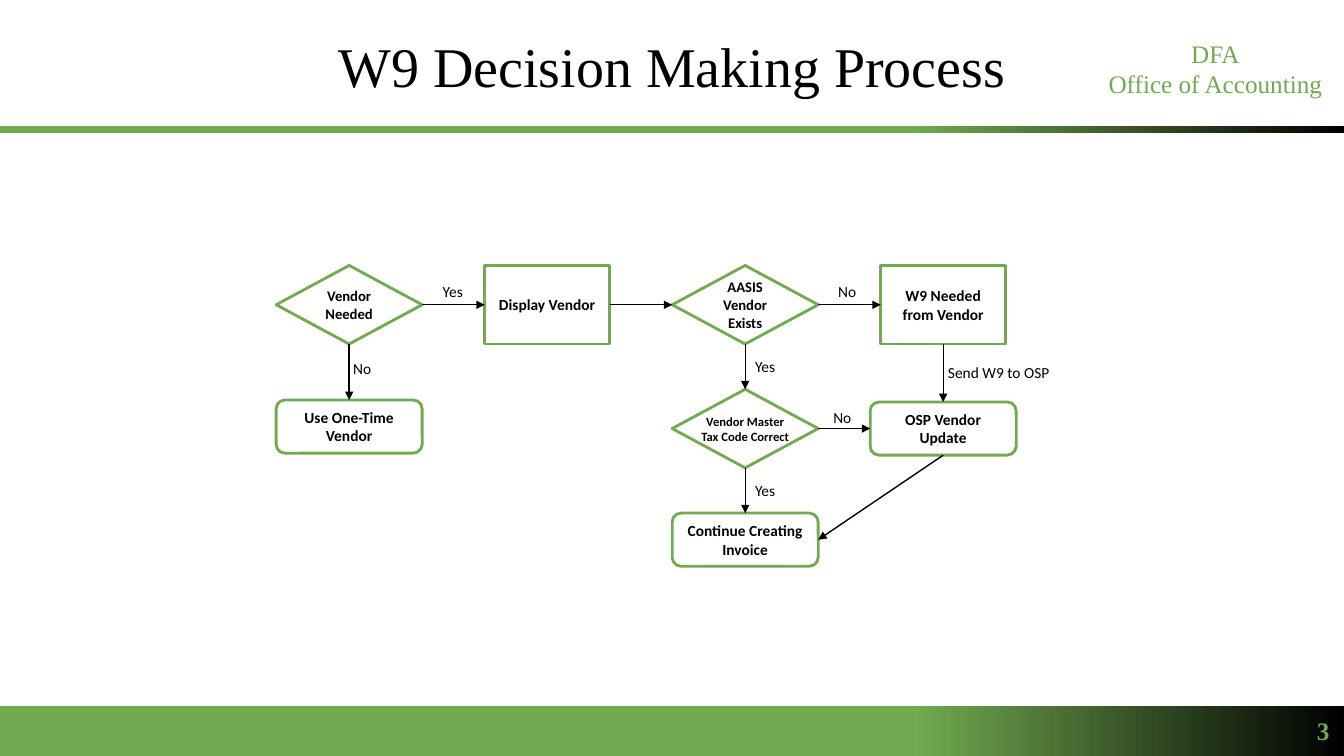
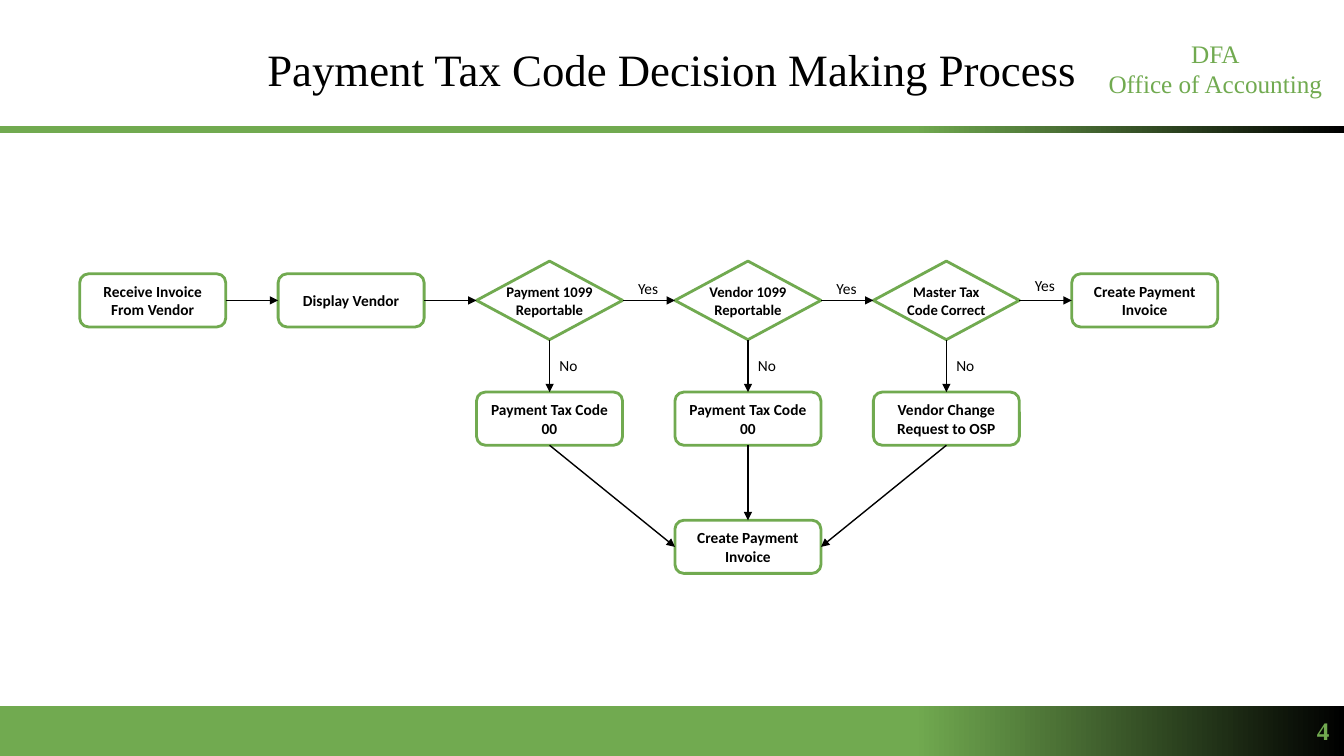
from dataclasses import dataclass
from typing import Optional

import pptx
import pptx.dml.color
import pptx.enum.dml
import pptx.enum.shapes
import pptx.enum.text
import pptx.oxml
import pptx.oxml.ns
import pptx.util
from pptx.util import Cm

SHAPE = pptx.enum.shapes.MSO_SHAPE
ALIGN = pptx.enum.text.PP_ALIGN
ANCHOR = pptx.enum.text.MSO_ANCHOR
AUTO_SIZE = pptx.enum.text.MSO_AUTO_SIZE
TOP, LEFT, BOTTOM, RIGHT = range(4)


@dataclass(frozen=True)
class Theme:
    green: str = "71AA50"
    black: str = "000000"
    heading_font: str = "Times New Roman"
    body_font: str = "Calibri"
    header_size: float = 18
    step_size: float = 11
    decision_size: float = 10.5
    small_size: float = 9
    outline: float = 2
    arrow: float = 1


THEME = Theme()
SLIDE_WIDTH, SLIDE_HEIGHT = 33.87, 19.05


@dataclass(frozen=True)
class Kind:
    """Outline, size in centimetres and type size of a flowchart box."""
    preset: SHAPE
    width: float
    height: float
    text_size: float


DECISION = Kind(SHAPE.FLOWCHART_DECISION, 3.68, 1.98, THEME.decision_size)
SMALL_DECISION = Kind(SHAPE.FLOWCHART_DECISION, 3.68, 1.98, THEME.small_size)
PROCESS = Kind(SHAPE.FLOWCHART_PROCESS, 3.15, 1.98, THEME.step_size)
STEP = Kind(SHAPE.FLOWCHART_ALTERNATE_PROCESS, 3.68, 1.34, THEME.step_size)


@dataclass(frozen=True)
class Node:
    name: str
    kind: Kind
    column: int
    row: float  # vertical centre in centimetres
    text: str
    wrap: bool = True


@dataclass(frozen=True)
class Arrow:
    start: str
    start_side: int
    end: str
    end_side: int
    label: str = ""
    nudge: tuple[float, float] = (0, 0)


@dataclass(frozen=True)
class Flowchart:
    title: str
    title_size: float
    title_centre: float
    number: str
    first_column: float
    column_step: float
    nodes: list[Node]
    arrows: list[Arrow]


# Width of each label box in centimetres
LABEL_WIDTHS = {"No": 0.97, "Yes": 1.04, "Send W9 to OSP": 3.07}
LABEL_HEIGHT = 0.73
LABEL_RISE = 0.3

# First flowchart rows
VENDOR_ROW, UPDATE_ROW, INVOICE_ROW = 7.68, 10.8, 13.6
# Second flowchart rows
CHECK_ROW, CODE_ROW, PAYMENT_ROW = 7.57, 10.55, 13.78

FLOWCHARTS = [
    Flowchart(
        "W9 Decision Making Process", 40, 1.64, "3", 8.8, 4.99,
        [
            Node("needed", DECISION, 0, VENDOR_ROW, "Vendor Needed"),
            Node("display", PROCESS, 1, VENDOR_ROW, "Display Vendor"),
            Node("exists", DECISION, 2, VENDOR_ROW, "AASIS Vendor Exists"),
            Node("w9", PROCESS, 3, VENDOR_ROW, "W9 Needed from Vendor"),
            Node("one_time", STEP, 0, 10.75, "Use One-Time Vendor"),
            Node("master", SMALL_DECISION, 2, UPDATE_ROW,
                 "Vendor Master\nTax Code Correct", wrap=False),
            Node("update", STEP, 3, UPDATE_ROW, "OSP Vendor Update"),
            Node("invoice", STEP, 2, INVOICE_ROW, "Continue Creating Invoice"),
        ],
        [
            Arrow("needed", BOTTOM, "one_time", TOP, "No", (-0.15, -0.09)),
            Arrow("needed", RIGHT, "display", LEFT, "Yes", (0, -0.04)),
            Arrow("display", RIGHT, "exists", LEFT),
            Arrow("exists", RIGHT, "w9", LEFT, "No", (-0.05, -0.02)),
            Arrow("exists", BOTTOM, "master", TOP, "Yes"),
            Arrow("master", BOTTOM, "invoice", TOP, "Yes"),
            Arrow("master", RIGHT, "update", LEFT, "No", (-0.04, 0.03)),
            Arrow("w9", BOTTOM, "update", TOP, "Send W9 to OSP", (-0.13, 0)),
            Arrow("update", BOTTOM, "invoice", RIGHT),
        ],
    ),
    Flowchart(
        "Payment Tax Code Decision Making Process", 32, 1.73, "4", 3.85, 5,
        [
            Node("receive", STEP, 0, CHECK_ROW, "Receive Invoice From Vendor"),
            Node("display", STEP, 1, CHECK_ROW, "Display Vendor"),
            Node("payment", DECISION, 2, CHECK_ROW,
                 "Payment 1099\nReportable", wrap=False),
            Node("vendor", DECISION, 3, CHECK_ROW,
                 "Vendor 1099\nReportable", wrap=False),
            Node("master", DECISION, 4, CHECK_ROW,
                 "Master Tax\nCode Correct", wrap=False),
            Node("create", STEP, 5, CHECK_ROW, "Create Payment Invoice"),
            Node("payment_code", STEP, 2, CODE_ROW, "Payment Tax Code 00"),
            Node("vendor_code", STEP, 3, CODE_ROW, "Payment Tax Code 00"),
            Node("change", STEP, 4, CODE_ROW, "Vendor Change Request to OSP"),
            Node("invoice", STEP, 3, PAYMENT_ROW, "Create Payment Invoice"),
        ],
        [
            Arrow("receive", RIGHT, "display", LEFT),
            Arrow("display", RIGHT, "payment", LEFT),
            Arrow("payment", RIGHT, "vendor", LEFT, "Yes"),
            Arrow("vendor", RIGHT, "master", LEFT, "Yes"),
            Arrow("master", RIGHT, "create", LEFT, "Yes", (0, -0.07)),
            Arrow("payment", BOTTOM, "payment_code", TOP, "No"),
            Arrow("vendor", BOTTOM, "vendor_code", TOP, "No"),
            Arrow("master", BOTTOM, "change", TOP, "No"),
            Arrow("payment_code", BOTTOM, "invoice", LEFT),
            Arrow("vendor_code", BOTTOM, "invoice", TOP),
            Arrow("change", BOTTOM, "invoice", RIGHT),
        ],
    ),
]


def rgb(color: str) -> pptx.dml.color.RGBColor:
    return pptx.dml.color.RGBColor.from_string(color)


def write_text(shape, text: str, *, size: float, font: str = THEME.body_font,
               color: str = THEME.black, bold: bool = False,
               align: ALIGN = ALIGN.CENTER, anchor: ANCHOR = ANCHOR.MIDDLE,
               wrap: bool = False, auto_size: Optional[AUTO_SIZE] = None) -> None:
    """Fill a shape with text, one paragraph a line."""
    frame = shape.text_frame
    frame.text = text
    frame.word_wrap = wrap
    frame.vertical_anchor = anchor
    frame.auto_size = auto_size
    for paragraph in frame.paragraphs:
        paragraph.alignment = align
        paragraph.font.size = pptx.util.Pt(size)
        paragraph.font.name = font
        paragraph.font.bold = bold
        paragraph.font.color.rgb = rgb(color)


def add_text(slide, text: str, center_x: float, center_y: float,
             width: float, height: float, **text_format) -> None:
    box = slide.shapes.add_textbox(Cm(center_x - width / 2), Cm(center_y - height / 2),
                                   Cm(width), Cm(height))
    write_text(box, text, anchor=ANCHOR.TOP,
               auto_size=AUTO_SIZE.SHAPE_TO_FIT_TEXT, **text_format)


# Shared parts
def move_band_to_layout(slide, layout, top: float, height: float) -> None:
    """Draw a gradient band and place it behind everything on the layout."""
    band = slide.shapes.add_shape(SHAPE.RECTANGLE, 0, Cm(top),
                                  Cm(SLIDE_WIDTH), Cm(height))
    band.shadow.inherit = False
    band.line.fill.background()
    band.fill.gradient()
    band.fill.gradient_angle = 0
    stops = zip(band.fill.gradient_stops, (0.68, 1), (THEME.green, THEME.black))
    for stop, position, color in stops:
        stop.position = position
        stop.color.rgb = rgb(color)
    layout.shapes.element.insert(2, band.element)


def add_header_and_number(slide, chart: Flowchart) -> None:
    title = slide.shapes.title
    width, height = 21.1, 1.96
    title.left, title.top = Cm((SLIDE_WIDTH - width) / 2), Cm(chart.title_centre - height / 2)
    title.width, title.height = Cm(width), Cm(height)
    write_text(title, chart.title, size=chart.title_size,
               font=THEME.heading_font, auto_size=AUTO_SIZE.NONE)
    add_text(slide, "DFA\nOffice of Accounting", 30.63, 1.74, 5.94, 1.8,
             size=THEME.header_size, font=THEME.heading_font, color=THEME.green)
    add_text(slide, chart.number, 33.36, 18.42, 0.84, 1.02, size=THEME.header_size,
             font=THEME.heading_font, color=THEME.green, bold=True, align=ALIGN.LEFT)


# Flowchart parts
def add_node(slide, node: Node, center_x: float):
    kind = node.kind
    shape = slide.shapes.add_shape(
        kind.preset, Cm(center_x - kind.width / 2), Cm(node.row - kind.height / 2),
        Cm(kind.width), Cm(kind.height))
    shape.shadow.inherit = False
    shape.fill.background()
    shape.line.color.rgb = rgb(THEME.green)
    shape.line.width = pptx.util.Pt(THEME.outline)
    write_text(shape, node.text, size=kind.text_size, bold=True, wrap=node.wrap)
    return shape


def add_arrow(slide, arrow: Arrow, shapes: dict) -> None:
    connector = slide.shapes.add_connector(
        pptx.enum.shapes.MSO_CONNECTOR.STRAIGHT, 0, 0, 0, 0)
    connector.begin_connect(shapes[arrow.start], arrow.start_side)
    connector.end_connect(shapes[arrow.end], arrow.end_side)
    connector.line.color.rgb = rgb(THEME.black)
    connector.line.width = pptx.util.Pt(THEME.arrow)
    head = pptx.oxml.parse_xml(
        f'<a:tailEnd {pptx.oxml.ns.nsdecls("a")} type="triangle"/>')
    connector.line._get_or_add_ln().append(head)
    connector.element.spPr.append(
        pptx.oxml.parse_xml(f'<a:effectLst {pptx.oxml.ns.nsdecls("a")}/>'))

    # Labels stand above a level arrow and to the right of an upright one
    if arrow.label:
        width = LABEL_WIDTHS[arrow.label]
        level = arrow.start_side == RIGHT
        center_x = (connector.begin_x + connector.end_x) / 2 / Cm(1)
        center_y = (connector.begin_y + connector.end_y) / 2 / Cm(1)
        add_text(slide, arrow.label,
                 center_x + (0 if level else width / 2) + arrow.nudge[0],
                 center_y - (LABEL_RISE if level else 0) + arrow.nudge[1],
                 width, LABEL_HEIGHT, size=THEME.step_size, align=ALIGN.LEFT)


def add_flowchart(slide, chart: Flowchart) -> None:
    shapes = {
        node.name: add_node(slide, node,
                            chart.first_column + node.column * chart.column_step)
        for node in chart.nodes
    }
    for arrow in chart.arrows:
        add_arrow(slide, arrow, shapes)


def main() -> None:
    presentation = pptx.Presentation()
    presentation.slide_width = Cm(SLIDE_WIDTH)
    presentation.slide_height = Cm(SLIDE_HEIGHT)
    layout = presentation.slide_layouts.get_by_name("Title Only")
    slides = [presentation.slides.add_slide(layout) for _ in FLOWCHARTS]

    # Bands below the title and at the foot
    for top, height in ((3.17, 0.18), (17.78, 1.27)):
        move_band_to_layout(slides[0], layout, top, height)

    for slide, chart in zip(slides, FLOWCHARTS):
        add_header_and_number(slide, chart)
        add_flowchart(slide, chart)
    presentation.save("out.pptx")


if __name__ == "__main__":
    main()
